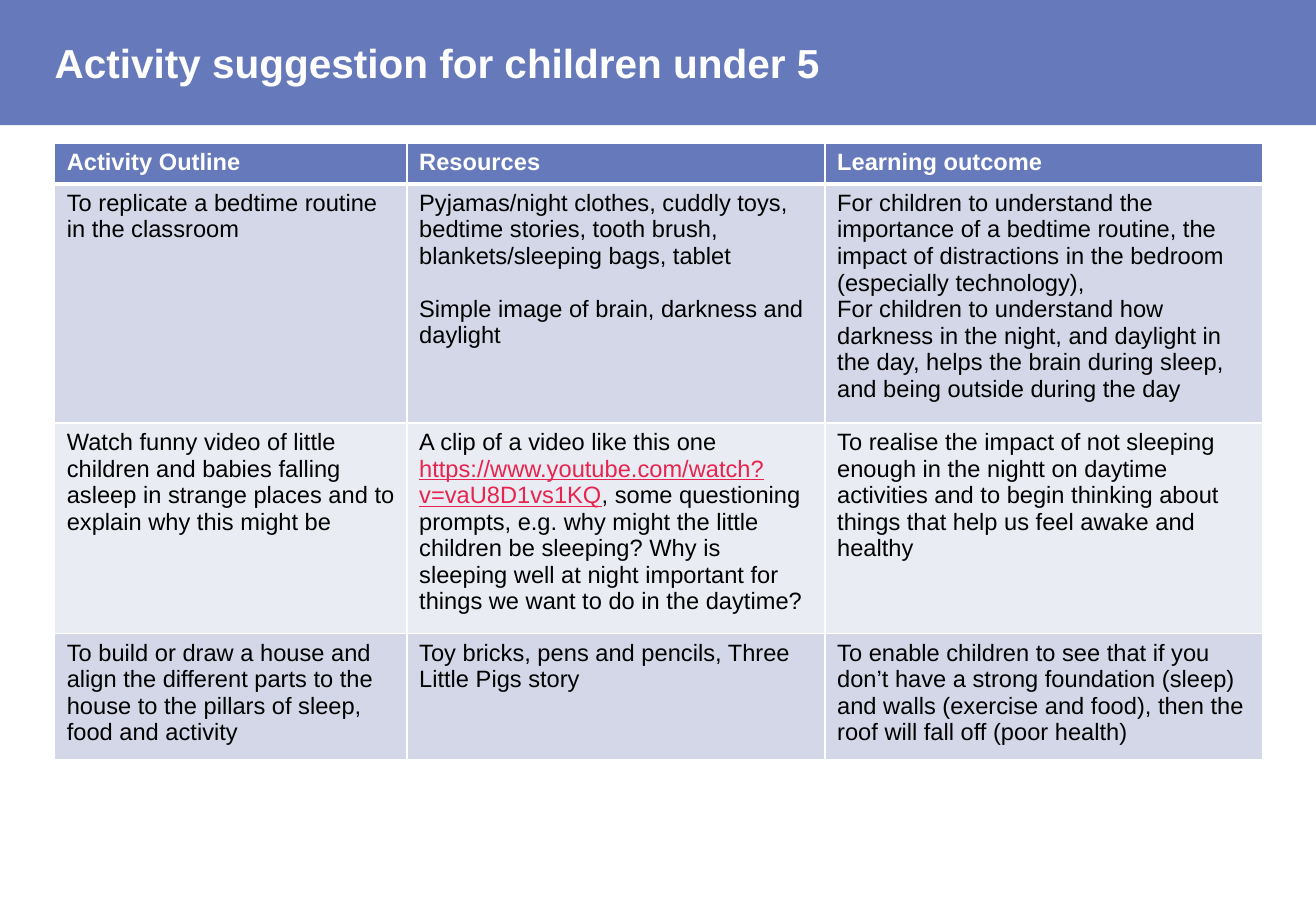
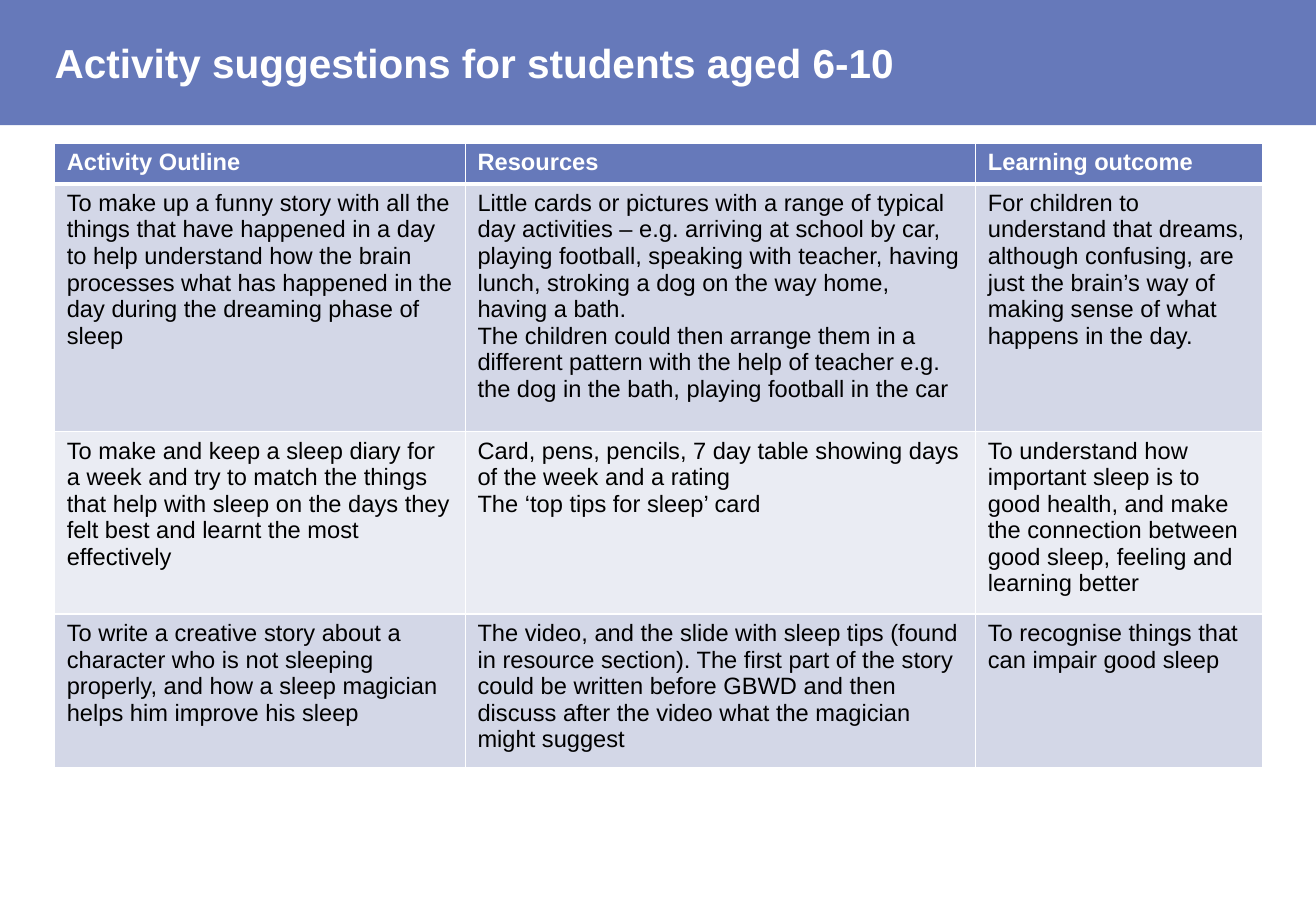
import pptx
import pptx.dml.color
import pptx.enum.shapes
import pptx.enum.text
import pptx.oxml
import pptx.oxml.ns
import pptx.util

PX = 9144  # EMU per px, 100 px to the inch
SLIDE_SIZE = (1083, 750)
BAND_HEIGHT = 103
MARGIN = 45
TITLE_TOP, TITLE_HEIGHT = 12, 79
TABLE_TOP = 118

FONT = "Arial"
BLUE, WHITE, BLACK, LINK_RED = "6679BA", "FFFFFF", "000000", "E6244F"
ROW_FILLS = ("D3D7E7", "EAECF3")
TITLE_SIZE, TABLE_SIZE = 24, 14
SECTION_GAP = 15.64  # one line of table text
THIN, THICK = 1, 3

HEADER = ["Activity Outline", "Resources", "Learning outcome"]
VIDEO_LINK = "https://www.youtube.com/watch?v=vaU8D1vs1KQ"

# A cell is a list of paragraphs; a paragraph starting with GAP stands one line lower.
GAP = "\n"
SLIDES = [
    {
        "title": "Activity suggestion for children under 5",
        "columns": (290, 344, 360),
        "heights": (32, 184, 163, 97),
        "rows": [
            (["To replicate a bedtime routine in the classroom"],
             ["Pyjamas/night clothes, cuddly toys, bedtime stories, tooth brush, "
              "blankets/sleeping bags, tablet",
              GAP + "Simple image of brain, darkness and daylight"],
             ["For children to understand the importance of a bedtime routine, the impact of "
              "distractions in the bedroom (especially technology),",
              "For children to understand how darkness in the night, and daylight in the day, "
              "helps the brain during sleep, and being outside during the day"]),
            (["Watch funny video of little children and babies falling asleep in strange places "
              "and to explain why this might be"],
             [f"A clip of a video like this one {VIDEO_LINK}, some questioning prompts, e.g. why "
              "might the little children be sleeping? Why is sleeping well at night important "
              "for things we want to do in the daytime?"],
             ["To realise the impact of not sleeping enough in the nightt on daytime activities "
              "and to begin thinking about things that help us feel awake and healthy"]),
            (["To build or draw a house and align the different parts to the house to the "
              "pillars of sleep, food and activity"],
             ["Toy bricks, pens and pencils, Three Little Pigs story"],
             ["To enable children to see that if you don’t have a strong foundation (sleep) and "
              "walls (exercise and food), then the roof will fall off (poor health)"]),
        ],
    },
    {
        "title": "Activity suggestions for students aged 6-10",
        "columns": (338, 420, 236),
        "heights": (32, 204, 140, 118),
        "rows": [
            (["To make up a funny story with all the things that have happened in a day to help "
              "understand how the brain processes what has happened in the day during the "
              "dreaming phase of sleep"],
             ["Little cards or pictures with a range of typical day activities – e.g. arriving "
              "at school by car, playing football, speaking with teacher, having lunch, stroking "
              "a dog on the way home, having a bath.",
              "The children could then arrange them in a different pattern with the help of "
              "teacher e.g. the dog in the bath, playing football in the car"],
             ["For children to understand that dreams, although confusing, are just the brain’s "
              "way of making sense of what happens in the day."]),
            (["To make and keep a sleep diary for a week and try to match the things that help "
              "with sleep on the days they felt best and learnt the most effectively"],
             ["Card, pens, pencils, 7 day table showing days of the week and a rating",
              "The ‘top tips for sleep’ card"],
             ["To understand how important sleep is to good health, and make the connection "
              "between good sleep, feeling and learning better"]),
            (["To write a creative story about a character who is not sleeping properly, and how "
              "a sleep magician helps him improve his sleep"],
             ["The video, and the slide with sleep tips (found in resource section). The first "
              "part of the story could be written before GBWD and then discuss after the video "
              "what the magician might suggest"],
             ["To recognise things that can impair good sleep"]),
        ],
    },
]


def rgb(value):
    return pptx.dml.color.RGBColor.from_string(value)


def emu(*lengths):
    return [length * PX for length in lengths]


def set_font(font, size, color, bold=False):
    font.name = FONT
    font.size = pptx.util.Pt(size)
    font.color.rgb = rgb(color)
    font.bold = bold


def add_title_band(slide, title):
    band = slide.shapes.add_shape(pptx.enum.shapes.MSO_SHAPE.RECTANGLE,
                                  *emu(0, 0, SLIDE_SIZE[0], BAND_HEIGHT))
    band.shadow.inherit = False
    band.fill.solid()
    band.fill.fore_color.rgb = rgb(BLUE)
    band.line.fill.background()

    box = slide.shapes.add_textbox(
        *emu(MARGIN, TITLE_TOP, SLIDE_SIZE[0] - 2 * MARGIN, TITLE_HEIGHT))
    frame = box.text_frame
    frame.word_wrap = True
    frame.vertical_anchor = pptx.enum.text.MSO_ANCHOR.MIDDLE
    frame.margin_left = frame.margin_top = frame.margin_right = frame.margin_bottom = 0
    paragraph = frame.paragraphs[0]
    paragraph.text = title
    set_font(paragraph.font, TITLE_SIZE, WHITE, bold=True)


def set_borders(cell, top, bottom):
    """Draw white cell borders; widths are in points."""
    properties = cell._tc.get_or_add_tcPr()
    for side, width in (("L", THIN), ("R", THIN), ("T", top), ("B", bottom)):
        properties.append(pptx.oxml.parse_xml(
            f'<a:ln{side} {pptx.oxml.ns.nsdecls("a")} w="{pptx.util.Pt(width)}">'
            f'<a:solidFill><a:srgbClr val="{WHITE}"/></a:solidFill></a:ln{side}>'))


def write_paragraph(paragraph, text, color, bold):
    if text.startswith(GAP):
        paragraph.space_before = pptx.util.Pt(SECTION_GAP)
    set_font(paragraph.font, TABLE_SIZE, color, bold)
    before, link, after = text.removeprefix(GAP).partition(VIDEO_LINK)
    for part in filter(None, (before, link, after)):
        run = paragraph.add_run()
        run.text = part
        if part == VIDEO_LINK:
            run.font.color.rgb = rgb(LINK_RED)
            run.font.underline = True


def fill_cell(cell, texts, row_index):
    is_header = row_index == 0
    set_borders(cell, THICK if row_index == 1 else THIN, THICK if is_header else THIN)
    cell.fill.solid()
    cell.fill.fore_color.rgb = rgb(BLUE if is_header else ROW_FILLS[(row_index - 1) % 2])
    frame = cell.text_frame
    for index, text in enumerate(texts):
        paragraph = frame.add_paragraph() if index else frame.paragraphs[0]
        write_paragraph(paragraph, text, WHITE if is_header else BLACK, is_header)


def add_activity_table(slide, columns, heights, rows):
    table = slide.shapes.add_table(
        len(heights), len(columns),
        *emu(MARGIN, TABLE_TOP, sum(columns), sum(heights))).table
    for column, width in zip(table.columns, emu(*columns)):
        column.width = width
    for row, height in zip(table.rows, emu(*heights)):
        row.height = height
    for row_index, cells in enumerate([[[label] for label in HEADER], *rows]):
        for column_index, texts in enumerate(cells):
            fill_cell(table.cell(row_index, column_index), texts, row_index)


def main():
    presentation = pptx.Presentation()
    presentation.slide_width, presentation.slide_height = emu(*SLIDE_SIZE)
    for content in SLIDES:
        slide = presentation.slides.add_slide(presentation.slide_layouts[6])
        add_title_band(slide, content["title"])
        add_activity_table(slide, content["columns"], content["heights"], content["rows"])
    presentation.save("out.pptx")


if __name__ == "__main__":
    main()
